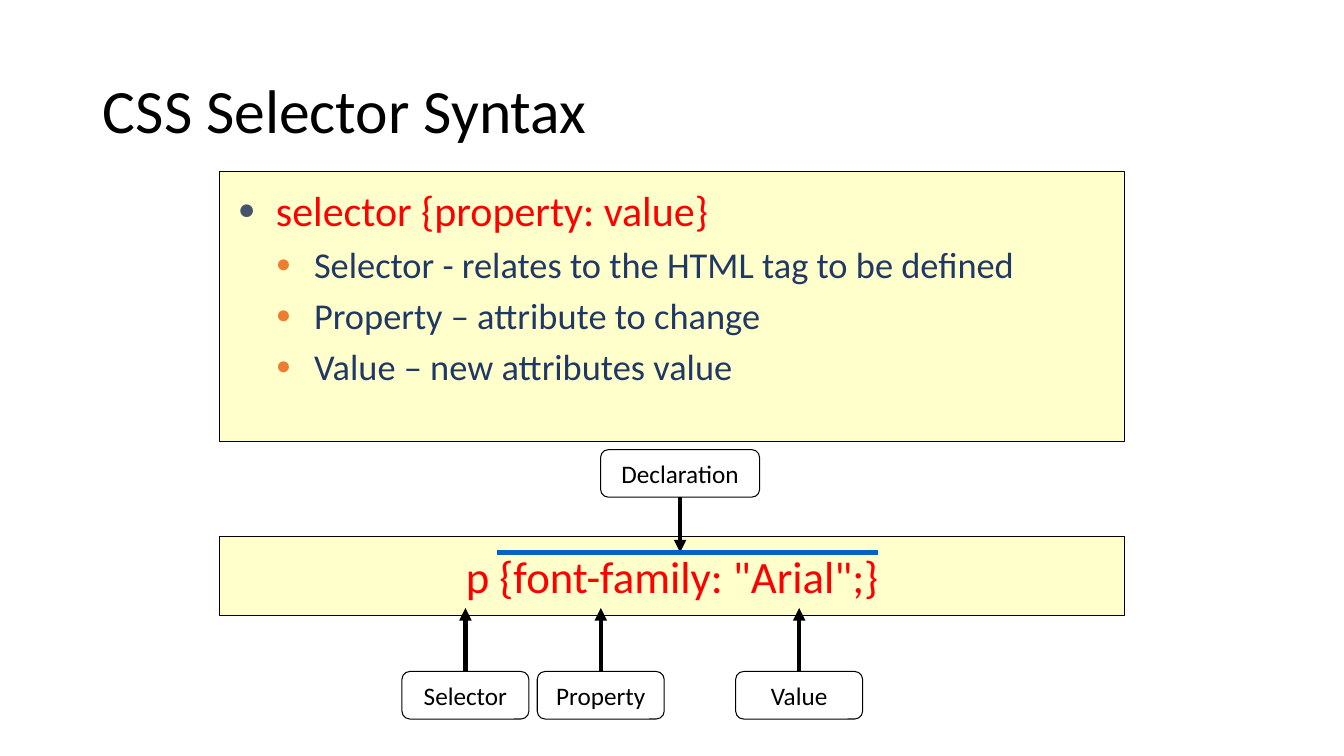
from lxml.etree import SubElement
from pptx import Presentation
from pptx.dml.color import RGBColor
from pptx.enum.shapes import MSO_CONNECTOR, MSO_SHAPE
from pptx.enum.text import MSO_ANCHOR, MSO_AUTO_SIZE, PP_ALIGN
from pptx.oxml.ns import qn
from pptx.util import Cm, Pt

COLORS = {"black": "000000", "red": "FF0000", "navy": "203864", "cream": "FFFFCC",
          "blue": "0563C1", "slate": "44546A", "orange": "ED7D31"}
TITLE = "CSS Selector Syntax"
RULE = 'p {font-family: "Arial";}'
BULLETS = [  # level, text
    (0, "selector {property: value}"),
    (1, "Selector - relates to the HTML tag to be defined"),
    (1, "Property – attribute to change"),
    (1, "Value – new attributes value"),
]
LEVELS = [{"size": 30, "color": "red", "bullet": "slate"},
          {"size": 26, "color": "navy", "bullet": "orange"}]
INDENT = 0.96

# Lengths in cm
PANEL_X, PANEL_W = 5.54, 22.81
LABEL_H = 1.2
BRACE_Y = 13.92
LABELS = [  # text, centre x, top, width, side the arrow leaves, arrow end y
    ("Selector", 11.73, 16.92, 3.2, 0, 15.32),
    ("Value", 20.14, 16.92, 3.2, 0, 15.32),
    ("Property", 15.14, 16.92, 3.2, 0, 15.32),
    ("Declaration", 17.14, 11.33, 4.01, 2, BRACE_Y),
]


def rgb(name):
    return RGBColor.from_string(COLORS[name])


def style_text(p, text, size, color):
    r = p.add_run()
    r.text = text
    for key, value in {"name": "Calibri", "size": Pt(size)}.items():
        setattr(r.font, key, value)
    r.font.color.rgb = rgb(color)


def place(sp, *box):
    for key, value in zip(("left", "top", "width", "height"), box):
        setattr(sp, key, Cm(value))


def add_box(s, kind, box, fill=None, text="", size=18, color="black"):
    sp = s.shapes.add_shape(kind, *map(Cm, box))
    sp.shadow.inherit = False
    if fill:
        sp.fill.solid()
        sp.fill.fore_color.rgb = rgb(fill)
    else:
        sp.fill.background()
    sp.line.color.rgb = rgb("black")
    sp.line.width = Pt(0.75)
    if text:
        tf = sp.text_frame
        tf.word_wrap = False
        tf.vertical_anchor = MSO_ANCHOR.MIDDLE
        p = tf.paragraphs[0]
        p.alignment = PP_ALIGN.CENTER
        style_text(p, text, size, color)
    return sp


def add_line(s, x1, y1, x2, y2, color, arrow=False):
    c = s.shapes.add_connector(MSO_CONNECTOR.STRAIGHT, *map(Cm, (x1, y1, x2, y2)))
    c.line.color.rgb = rgb(color)
    c.line.width = Pt(3)
    if arrow:
        SubElement(c.line._get_or_add_ln(), qn("a:tailEnd"), type="triangle")
    SubElement(c._element.spPr, qn("a:effectLst"))
    return c


def set_bullet(p, level, color):
    pPr = p._p.get_or_add_pPr()
    pPr.set("marL", str(Cm(INDENT * (level + 1))))
    pPr.set("indent", str(-Cm(INDENT)))
    SubElement(SubElement(pPr, qn("a:buClr")), qn("a:srgbClr"), val=COLORS[color])
    SubElement(pPr, qn("a:buSzPct"), val="70000")
    SubElement(pPr, qn("a:buChar"), char="●")


def main():
    prs = Presentation()
    prs.slide_width, prs.slide_height = Cm(33.87), Cm(19.05)
    s = prs.slides.add_slide(prs.slide_layouts[1])
    title, body = s.placeholders

    place(title, 2.34, 1.02, 29.21, 3.68)
    title.text_frame.vertical_anchor = MSO_ANCHOR.MIDDLE
    p = title.text_frame.paragraphs[0]
    p.alignment = PP_ALIGN.LEFT
    p.line_spacing = 0.9
    style_text(p, TITLE, 44, "black")

    panel = add_box(s, MSO_SHAPE.RECTANGLE, (PANEL_X, 4.32, PANEL_W, 6.81), "cream")
    body._element.addprevious(panel._element)  # panel sits behind the list

    place(body, 5.74, 4.52, 22.86, 6.2)
    tf = body.text_frame
    tf.auto_size = MSO_AUTO_SIZE.NONE
    for i, (level, text) in enumerate(BULLETS):
        p = tf.add_paragraph() if i else tf.paragraphs[0]
        p.level = level
        fmt = LEVELS[level]
        set_bullet(p, level, fmt["bullet"])
        style_text(p, text, fmt["size"], fmt["color"])

    add_box(s, MSO_SHAPE.RECTANGLE, (PANEL_X, 13.51, PANEL_W, 2.01), "cream", RULE, 32, "red")
    for text, x, top, width, side, end_y in LABELS:
        label = add_box(s, MSO_SHAPE.ROUNDED_RECTANGLE,
                        (x - width / 2, top, width, LABEL_H), text=text)
        arrow = add_line(s, x, top, x, end_y, "black", arrow=True)
        arrow.begin_connect(label, side)
    add_line(s, 12.52, BRACE_Y, 22.12, BRACE_Y, "blue")

    prs.save("out.pptx")


if __name__ == "__main__":
    main()
